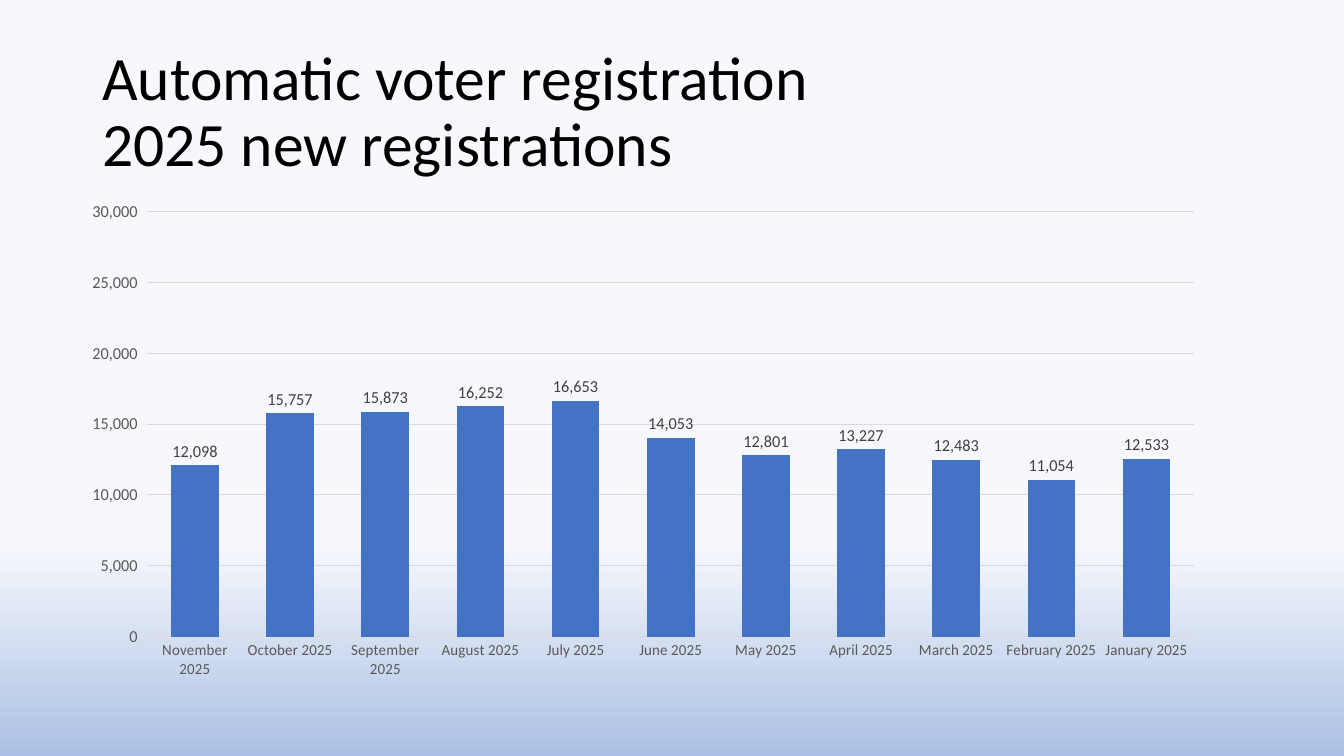
"""Builds a slide with a column chart of new voter registrations by month."""
from lxml import etree
from pptx import Presentation
from pptx.chart.data import CategoryChartData
from pptx.dml.color import RGBColor
from pptx.enum.chart import XL_CHART_TYPE, XL_LABEL_POSITION, XL_TICK_LABEL_POSITION, XL_TICK_MARK
from pptx.enum.text import MSO_ANCHOR
from pptx.oxml.ns import qn
from pptx.util import Inches, Pt

COLUMN = XL_CHART_TYPE.COLUMN_CLUSTERED
OUTSIDE_END = XL_LABEL_POSITION.OUTSIDE_END
NO_TICK = XL_TICK_MARK.NONE
HIGH = XL_TICK_LABEL_POSITION.HIGH
MIDDLE = MSO_ANCHOR.MIDDLE

BLACK = RGBColor(0x00, 0x00, 0x00)
DARK_GRAY = RGBColor(0x40, 0x40, 0x40)
GRAY = RGBColor(0x59, 0x59, 0x59)
LIGHT_GRAY = RGBColor(0xD9, 0xD9, 0xD9)
BLUE = RGBColor(0x44, 0x72, 0xC4)
PALE = RGBColor(0xF6, 0xF8, 0xFC)
SKY = RGBColor(0xAB, 0xC0, 0xE4)

COLS, ROWS = 160, 75
PLOT = {"x": 0.018, "y": 0.021, "w": 0.931, "h": 0.886}

MONTHS = ["January", "February", "March", "April", "May", "June", "July",
          "August", "September", "October", "November"]
REGISTRATIONS = [12533, 11054, 12483, 13227, 12801, 14053, 16653,
                 16252, 15873, 15757, 12098]


class Deck:
    """Holds the style and the current slide; lengths are grid columns and rows."""

    def __init__(self, font="Calibri"):
        self.font = font
        self.prs = Presentation()
        self.prs.slide_width, self.prs.slide_height = Inches(13.333), Inches(7.5)
        self.s = self.prs.slides.add_slide(self.prs.slide_layouts[6])

    def box(self, x, y, w, h):
        col, row = self.prs.slide_width / COLS, self.prs.slide_height / ROWS
        return int(x * col), int(y * row), int(w * col), int(h * row)

    def style(self, font, size, color):
        font.name, font.size, font.color.rgb = self.font, Pt(size), color

    def background(self, *stops):
        fill = self.s.background.fill
        fill.gradient()
        fill.gradient_angle = 270
        for stop, (position, color) in zip(fill.gradient_stops, stops):
            stop.position, stop.color.rgb = position, color

    def title(self, text, *area):
        tf = self.s.shapes.add_textbox(*self.box(*area)).text_frame
        tf.word_wrap, tf.vertical_anchor = True, MIDDLE
        p = tf.paragraphs[0]
        p.text, p.line_spacing = text, 0.9
        self.style(p.font, 44, BLACK)

    def axis(self, axis, size):
        axis.major_tick_mark = axis.minor_tick_mark = NO_TICK
        self.style(axis.tick_labels.font, size, GRAY)

    def hairline(self, line):
        line.color.rgb, line.width = LIGHT_GRAY, Pt(0.75)

    def column_chart(self, categories, values, *area):
        data = CategoryChartData(number_format="#,##0")
        data.categories = categories
        data.add_series("Series 1", values)
        chart = self.s.shapes.add_chart(COLUMN, *self.box(*area), data).chart
        chart.has_legend = chart.has_title = False
        self.style(chart.font, 10, BLACK)

        months, counts = chart.category_axis, chart.value_axis
        self.axis(months, 11)
        self.axis(counts, 12)
        months.reverse_order, counts.tick_label_position = True, HIGH
        self.hairline(months.format.line)
        counts.minimum_scale, counts.maximum_scale, counts.major_unit = 0, 30000, 5000
        counts.format.line.fill.background()
        self.hairline(counts.major_gridlines.format.line)

        plot = chart.plots[0]
        plot.vary_by_categories, plot.gap_width, plot.overlap = False, 100, -27
        fill = plot.series[0].format.fill
        fill.solid()
        fill.fore_color.rgb = BLUE
        labels = plot.series[0].data_labels
        labels.show_value, labels.position = True, OUTSIDE_END
        labels.number_format, labels.number_format_is_linked = "#,##0", False
        self.style(labels.font, 12, DARK_GRAY)
        self.place_plot(chart)

    def place_plot(self, chart):
        area = chart.element.find(".//" + qn("c:plotArea"))
        layout = area.find(qn("c:layout"))
        if layout is None:
            layout = etree.Element(qn("c:layout"))
            area.insert(0, layout)
        manual = etree.SubElement(layout, qn("c:manualLayout"))
        settings = {"layoutTarget": "inner", "xMode": "edge", "yMode": "edge", **PLOT}
        for name, value in settings.items():
            etree.SubElement(manual, qn("c:" + name)).set("val", str(value))


def main():
    deck = Deck()
    deck.background((0.72, PALE), (1, SKY))
    deck.title("Automatic voter registration\v2025 new registrations", 11, 4, 138, 14.5)
    deck.column_chart([f"{month} 2025" for month in MONTHS], REGISTRATIONS,
                      11, 20, 138, 47.6)
    deck.prs.save("out.pptx")


if __name__ == "__main__":
    main()
